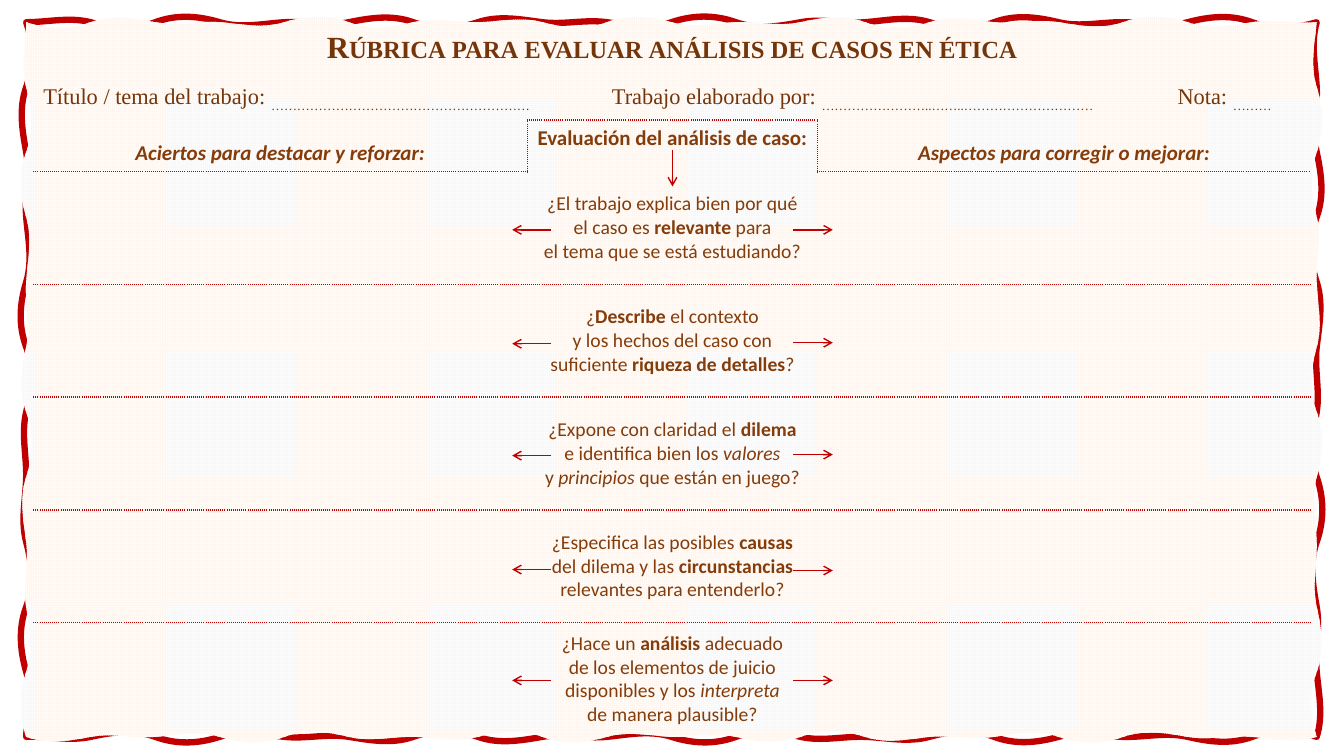
from copy import deepcopy
from math import sin

from lxml import etree
from pptx import Presentation
from pptx.dml.color import RGBColor
from pptx.enum.dml import MSO_PATTERN
from pptx.enum.shapes import MSO_CONNECTOR
from pptx.enum.text import MSO_ANCHOR as Anchor, PP_ALIGN as Align
from pptx.oxml import parse_xml
from pptx.oxml.ns import nsdecls, qn
from pptx.util import Inches, Pt

COLORS = {"red": "C00000", "brown": "843C0B", "title": "74350A",
          "cream": "FEF6F0", "white": "FFFFFF"}
SERIF, SANS = "Times New Roman", "Calibri"


def rgb(name):
    return RGBColor.from_string(COLORS[name])


def write(paragraph, pieces, size, face=SANS, color="brown", align=Align.CENTER):
    paragraph.alignment = align
    for text, style in pieces:
        for number, line in enumerate(text.split("\n")):
            if number:
                paragraph.add_line_break()
            if not line:
                continue
            run = paragraph.add_run()
            run.text = line
            run.font.size = Pt(size)
            run.font.name = face
            run.font.color.rgb = rgb(color)
            run.font.bold = "b" in style
            run.font.italic = "i" in style
            if "low" in style:
                run.font._element.set("baseline", "-25000")
            if "caps" in style:
                run.font._element.set("cap", "small")


prs = Presentation()
prs.slide_width, prs.slide_height = Inches(13.33), Inches(7.5)
slide = prs.slides.add_slide(prs.slide_layouts[6])
shapes = slide.shapes

LEFT, TOP, WIDTH, HEIGHT = 0.26, 0.22, 12.8, 7.09
ACROSS, DOWN = 20, 11
corners = [(n / ACROSS, 0) for n in range(ACROSS)]
corners += [(1, n / DOWN) for n in range(DOWN)]
corners += [(1 - n / ACROSS, 1) for n in range(ACROSS)]
corners += [(0, 1 - n / DOWN) for n in range(DOWN)]
nodes = [(Inches(LEFT + WIDTH * x), Inches(TOP + HEIGHT * y)) for x, y in corners]
builder = shapes.build_freeform(*nodes[0], scale=1.0)
builder.add_line_segments(nodes[1:] + nodes[:1], close=True)
frame = builder.convert_to_shape()
frame.shadow.inherit = False
frame.fill.patterned()
frame.fill.pattern = MSO_PATTERN.SMALL_GRID
frame.fill.fore_color.rgb = rgb("cream")
frame.fill.back_color.rgb = rgb("white")
frame.line.color.rgb = rgb("red")
frame.line.width = Pt(4.5)

edge = frame._element.spPr.find(".//" + qn("a:path"))
inner = deepcopy(edge)
edge.addnext(inner)
edge.set("fill", "none")
inner.set("stroke", "0")
for contour, phase in [(edge, 0), (inner, 2)]:
    sway = [Inches(0.08 * sin(2.4 * n + phase)) for n in range(len(nodes) + 1)]
    x, y = 0, 0
    for n, segment in enumerate(contour.findall(qn("a:lnTo"))):
        end = segment[0]
        end_x, end_y = int(end.get("x")), int(end.get("y"))
        dx, dy = (end_x - x) // 3, (end_y - y) // 3
        push_x, push_y = (0, 1) if dy == 0 else (1, 0)
        segment.tag = qn("a:cubicBezTo")
        for place, (control_x, control_y) in enumerate([
                (x + dx + push_x * sway[n], y + dy + push_y * sway[n]),
                (end_x - dx - push_x * sway[n + 1], end_y - dy - push_y * sway[n + 1])]):
            control = deepcopy(end)
            control.set("x", str(control_x))
            control.set("y", str(control_y))
            segment.insert(place, control)
        x, y = end_x, end_y

widths = [4.9, 0.74, 2.14, 3.47, 1.42]
heights = [0.5, 0.4, 0.51] + [1.12] * 5
rubric = shapes.add_table(len(heights), len(widths), Inches(0.33), Inches(0.29),
                          Inches(sum(widths)), Inches(sum(heights))).table
rubric.first_row = rubric.horz_banding = False
rubric._tbl.tblPr.find(qn("a:tableStyleId")).text = "{2D5ABB26-0587-4C30-8999-92F81FD0307C}"
for column, width in zip(rubric.columns, widths):
    column.width = Inches(width)
for row, height in zip(rubric.rows, heights):
    row.height = Inches(height)

HEADINGS, FIRST, LAST = 2, 3, 7
heading_sides = ["RB", "LTR", "LTR", "LB", "LB"]
for r in range(len(heights)):
    for c in range(len(widths)):
        dotted = "B" if (r, c) == (1, 2) else ""
        if r == HEADINGS:
            dotted = heading_sides[c]
        elif r >= FIRST:
            dotted = "" if r == FIRST and c in (1, 2) else "T"
            dotted += "B" if r < LAST else ""
        cell = rubric.cell(r, c)
        properties = cell._tc.get_or_add_tcPr()
        for side in "LRTB":
            stroke = "<a:noFill/>"
            if side in dotted:
                stroke = (f'<a:solidFill><a:srgbClr val="{COLORS["red"]}"/></a:solidFill>'
                          '<a:prstDash val="sysDot"/>')
            properties.append(parse_xml(
                f'<a:ln{side} {nsdecls("a")} w="12700">{stroke}</a:ln{side}>'))
        cell.fill.background()

merges = [(0, 0, 4), (1, 0, 1), (1, 2, 3)]
merges += [(r, *span) for r in range(HEADINGS, LAST + 1) for span in [(1, 2), (3, 4)]]
for r, first, last in merges:
    rubric.cell(r, first).merge(rubric.cell(r, last))

title = rubric.cell(0, 0).text_frame.paragraphs[0]
title.line_spacing, title.space_after = 0.9, Pt(6)
write(title, [("Rúbrica para evaluar análisis de casos en ética", "b caps")], 22, SERIF, "title")

blanks = [(0, "Título / tema del trabajo: ", "……………………………………………………"),
          (2, "Trabajo elaborado por: ", "……………………..……..…………………………"),
          (4, "Nota: ", "………")]
for c, label, dots in blanks:
    blank = rubric.cell(1, c).text_frame.paragraphs[0]
    blank.line_spacing = 0.9
    write(blank, [(label, ""), (dots, "low")], 16, SERIF, "title", Align.LEFT)

headings = [(0, "Aciertos para destacar y reforzar:", "bi", Anchor.BOTTOM),
            (1, "Evaluación del análisis de caso:", "b", Anchor.TOP),
            (3, "Aspectos para corregir o mejorar:", "bi", Anchor.BOTTOM)]
for c, text, style, anchor in headings:
    heading = rubric.cell(HEADINGS, c)
    heading.vertical_anchor = anchor
    write(heading.text_frame.paragraphs[0], [(text, style)], 15)

questions = [
    [[("¿El trabajo explica bien por qué", "")],
     [("el caso es ", ""), ("relevante", "b"), (" para\nel tema que se está estudiando?", "")]],
    [[("¿", ""), ("Describe", "b"), (" el contexto\ny los hechos del caso con\nsuficiente ", ""),
      ("riqueza de detalles", "b"), ("?", "")]],
    [[("¿Expone con claridad el ", ""), ("dilema\n", "b"), ("e identifica bien los ", ""),
      ("valores\n", "i"), ("y ", ""), ("principios", "i"), (" que están en juego?", "")]],
    [[("¿Especifica las posibles ", ""), ("causas", "b"), (" del dilema y las ", ""),
      ("circunstancias", "b"), (" relevantes para entenderlo?", "")]],
    [[("¿Hace un ", ""), ("análisis ", "b"),
      ("adecuado\nde los elementos de juicio disponibles y los ", ""),
      ("interpreta\n", "i"), ("de manera plausible?", "")]],
]
for r, paragraphs in enumerate(questions, FIRST):
    question = rubric.cell(r, 1)
    question.vertical_anchor = Anchor.MIDDLE
    wording = question.text_frame
    for number, pieces in enumerate(paragraphs):
        write(wording.add_paragraph() if number else wording.paragraphs[0], pieces, 14)

arrows = [(6.67, 1.49, 6.67, 1.85)]
arrows += [(7.87, y, 8.26, y) for y in (2.28, 3.4, 4.51, 5.66, 6.75)]
arrows += [(5.47, y, 5.08, y) for y in (2.28, 3.41, 4.52, 5.65, 6.75)]
for ends in arrows:
    arrow = shapes.add_connector(MSO_CONNECTOR.STRAIGHT, *[Inches(end) for end in ends])
    arrow.line.color.rgb = rgb("red")
    arrow.line.width = Pt(1)
    etree.SubElement(arrow.line._get_or_add_ln(), qn("a:tailEnd"), type="arrow")
    etree.SubElement(arrow._element.spPr, qn("a:effectLst"))

prs.save("out.pptx")
